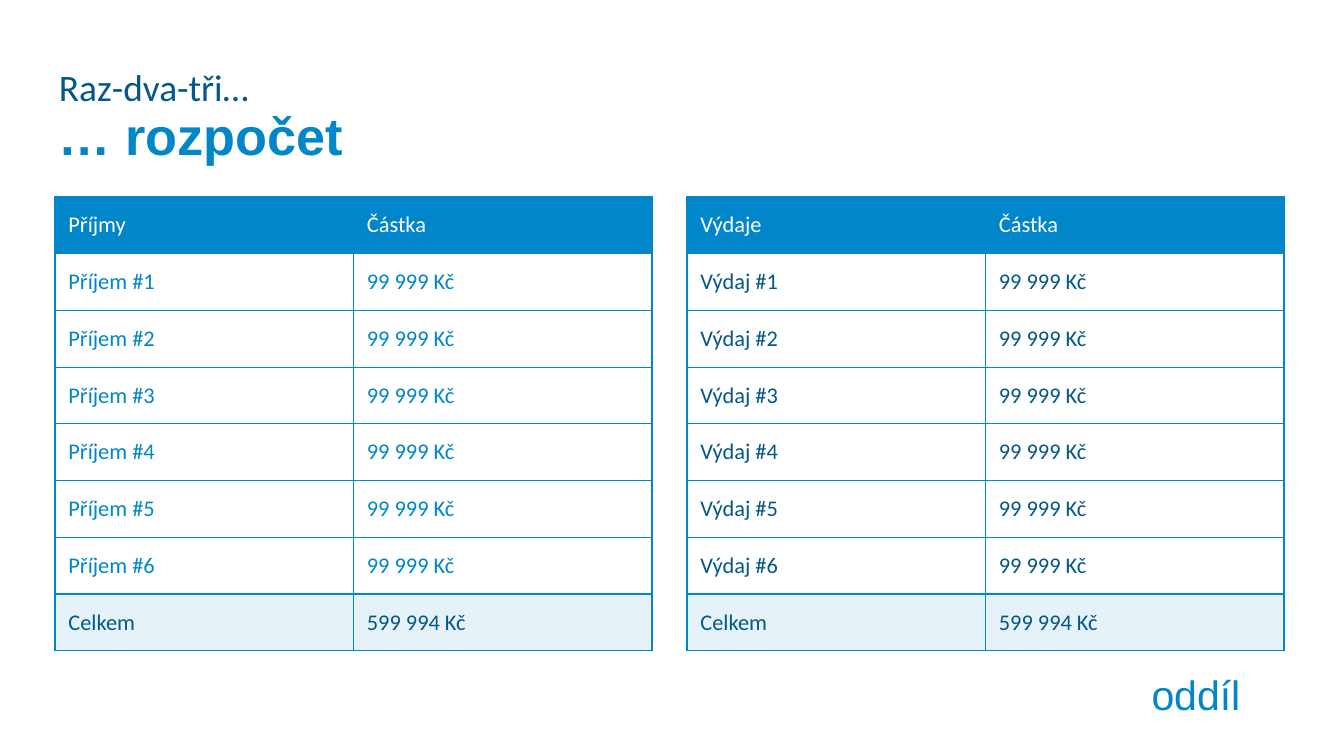
from lxml.etree import SubElement
from pptx import Presentation
from pptx.dml.color import RGBColor
from pptx.enum.text import MSO_ANCHOR as Anchor, MSO_AUTO_SIZE as AutoSize, PP_ALIGN as Align
from pptx.oxml.ns import qn
from pptx.util import Pt

SCALE = 914400 / 134.4
BLUE, NAVY, PALE, WHITE = "0086C9", "035887", "E5F3F9", "FFFFFF"


def px(length):
    """Turn pixels into EMU."""
    return round(length * SCALE)


def color(value):
    """Turn a hex string into a colour."""
    return RGBColor.from_string(value)


def apply(target, formats):
    """Set each named attribute of the target."""
    for name, value in formats.items():
        setattr(target, name, value)


def write(paragraph, text, size, font, ink, bold=False):
    """Put one formatted run in the paragraph."""
    run = paragraph.add_run()
    run.text = text
    apply(run.font, {"size": Pt(size), "name": font, "bold": bold})
    run.font.color.rgb = color(ink)


def add_borders(cell):
    """Draw a thin blue line on every side of the cell."""
    properties = cell._tc.get_or_add_tcPr()
    for index, side in enumerate(("lnL", "lnR", "lnT", "lnB")):
        line = properties.makeelement(qn(f"a:{side}"), {"w": str(Pt(0.75))})
        fill = SubElement(line, qn("a:solidFill"))
        SubElement(fill, qn("a:srgbClr"), val=BLUE)
        properties.insert(index, line)


def place_title(slide, box):
    """Fill the title placeholder with a lead-in and a heading."""
    title = slide.shapes.title
    apply(title, dict(zip(("left", "top", "width", "height"), map(px, box))))
    frame = title.text_frame
    apply(frame, {
        "margin_left": px(1), "margin_top": px(1), "margin_right": 0, "margin_bottom": 0,
        "vertical_anchor": Anchor.MIDDLE, "word_wrap": True, "auto_size": AutoSize.NONE,
    })
    lead, heading = frame.paragraphs[0], frame.add_paragraph()
    apply(lead, {"alignment": Align.LEFT, "space_before": Pt(0)})
    apply(heading, {"alignment": Align.LEFT, "space_before": Pt(0.9), "line_spacing": 0.9})
    write(lead, "Raz-dva-tři…", 20, "Calibri", NAVY)
    write(heading, "… rozpočet", 28, "Arial", BLUE, True)


def place_budget(slide, box, heading, item, item_ink):
    """Add a budget table with a header, six items and a total."""
    rows = [(heading, "Částka", WHITE, BLUE)]
    rows += [(f"{item} #{number}", "99 999 Kč", item_ink, None) for number in range(1, 7)]
    rows.append(("Celkem", "599 994 Kč", NAVY, PALE))
    table = slide.shapes.add_table(len(rows), 2, *map(px, box)).table
    apply(table, {"first_row": False, "horz_banding": False})
    for row_index, (label, amount, ink, fill) in enumerate(rows):
        for column_index, text in enumerate((label, amount)):
            cell = table.cell(row_index, column_index)
            cell.vertical_anchor = Anchor.MIDDLE
            write(cell.text_frame.paragraphs[0], text, 12, "Calibri", ink)
            if fill:
                cell.fill.solid()
                cell.fill.fore_color.rgb = color(fill)
            else:
                cell.fill.background()
            add_borders(cell)


def place_signature(slide, box):
    """Add the centred name of the group."""
    frame = slide.shapes.add_textbox(*map(px, box)).text_frame
    frame.word_wrap = True
    paragraph = frame.paragraphs[0]
    paragraph.alignment = Align.CENTER
    write(paragraph, "oddíl", 22, "Arial", BLUE)


def main():
    """Build and save the budget slide."""
    presentation = Presentation()
    apply(presentation, {"slide_width": px(1344), "slide_height": px(756)})
    slide = presentation.slides.add_slide(presentation.slide_layouts[5])
    place_signature(slide, (1095, 663, 202, 63))
    place_title(slide, (58, 62, 601, 106))
    place_budget(slide, (55, 197, 597, 454), "Příjmy", "Příjem", BLUE)
    place_budget(slide, (687, 197, 597, 454), "Výdaje", "Výdaj", NAVY)
    presentation.save("out.pptx")


if __name__ == "__main__":
    main()
